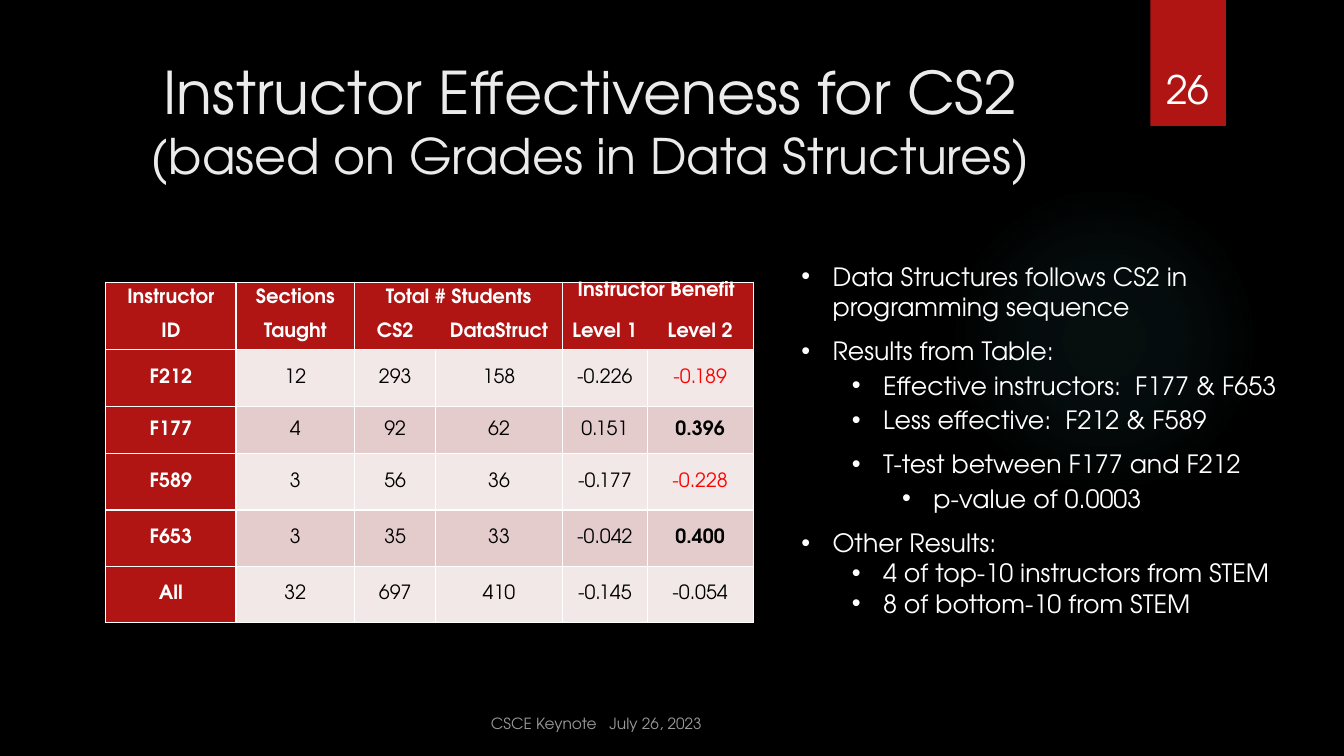
from lxml import etree
from pptx import Presentation
from pptx import util as u
from pptx.dml.color import RGBColor
from pptx.enum import shapes, text
from pptx.oxml import parse_xml
from pptx.oxml.ns import nsdecls, qn

FONT = "TeX Gyre Adventor"
RED, WHITE, BLACK = "B01513", "FFFFFF", "000000"
BANDS = ("F2E8E7", "E4CCCC")
CENTER = text.PP_ALIGN.CENTER

COLUMNS = [1.29, 1.18, 0.8, 1.26, 0.84, 1.05]
ROWS = [0.32, 0.35, 0.56, 0.47, 0.56, 0.56, 0.56]
VALUES = [
    ["Instructor", "Sections", "Total # Students", None, "Instructor Benefit", None],
    ["ID", "Taught", "CS2", "DataStruct", "Level 1", "Level 2"],
    ["F212", "12", "293", "158", "-0.226", "-0.189"],
    ["F177", "4", "92", "62", "0.151", "0.396"],
    ["F589", "3", "56", "36", "-0.177", "-0.228"],
    ["F653", "3", "35", "33", "-0.042", "0.400"],
    ["All", "32", "697", "410", "-0.145", "-0.054"],
]
HEADER_EDGES = [  # white edges of the second header row
    "LRB", "LRB", "LB", "RB", "LB", "RB"]
EMPHASIS = {"-0.189": {"color": "FF0000"}, "-0.228": {"color": "FF0000"},
            "0.396": {"bold": True}, "0.400": {"bold": True}}
FINDINGS = [  # level, space after, text
    (0, 10, "Data Structures follows CS2 in programming sequence"),
    (0, 3, "Results from Table:"),
    (1, 3, "Effective instructors:  F177 & F653"),
    (1, 10, "Less effective:  F212 & F589"),
    (1, 3, "T-test between F177 and F212"),
    (2, 10, "p-value of 0.0003"),
    (0, 0, "Other Results:"),
    (1, 0, "4 of top-10 instructors from STEM"),
    (1, 0, "8 of bottom-10 from STEM"),
]


def rgb(value):
    return RGBColor.from_string(value)


def add_span(para, words, size=18, color=WHITE, bold=False):
    span = para.add_run()
    span.text = words
    span.font.name, span.font.size, span.font.bold = FONT, u.Pt(size), bold
    span.font.color.rgb = rgb(color)


def add_box(page, box, anchor=text.MSO_ANCHOR.TOP, align=None):
    frame = page.shapes.add_textbox(*map(u.Inches, box)).text_frame
    frame.word_wrap = True
    frame.vertical_anchor = anchor
    frame.paragraphs[0].alignment = align
    return frame


def add_shape(page, kind, box):
    shape = page.shapes.add_shape(kind, *map(u.Inches, box))
    shape.shadow.inherit = False
    shape.line.fill.background()
    return shape


def add_glow(page, box):
    glow = add_shape(page, shapes.MSO_SHAPE.OVAL, box)
    stops = "".join(
        f'<a:gs pos="{place}000"><a:srgbClr val="50B9C1"><a:alpha val="{alpha}000"/>'
        "</a:srgbClr></a:gs>" for place, alpha in ((0, 7), (36, 6), (69, 0), (100, 0)))
    glow._element.spPr.find(qn("a:prstGeom")).addnext(parse_xml(
        f'<a:gradFill {nsdecls("a")} rotWithShape="1"><a:gsLst>{stops}</a:gsLst>'
        '<a:path path="circle"><a:fillToRect l="50000" t="50000" r="50000" b="50000"/>'
        "</a:path></a:gradFill>"))


def add_page_number(page, box, number):
    left, top, width, height = box
    ribbon = add_shape(page, shapes.MSO_SHAPE.RECTANGLE, box)
    ribbon.fill.solid()
    ribbon.fill.fore_color.rgb = rgb(RED)
    label = (left - 0.09, top + 0.32, width + 0.17, height - 0.41)
    frame = add_box(page, label, text.MSO_ANCHOR.BOTTOM, CENTER)
    add_span(frame.paragraphs[0], number, size=28)


def add_title(page, box):
    para = add_box(page, box, align=CENTER).paragraphs[0]
    add_span(para, "Instructor Effectiveness for CS2", size=42, color="EBEBEB")
    para.add_line_break()
    add_span(para, "(based on Grades in Data Structures)", size=35, color="EBEBEB")


def set_edges(cell, white):
    properties = cell._tc.get_or_add_tcPr()
    for index, edge in enumerate("LRTB"):
        line = etree.Element(qn(f"a:ln{edge}"), w=str(u.Pt(1)))
        if edge in white:
            fill = etree.SubElement(line, qn("a:solidFill"))
            etree.SubElement(fill, qn("a:srgbClr"), val=WHITE)
        else:
            etree.SubElement(line, qn("a:noFill"))
        properties.insert(index, line)


def fill_cell(cell, row, column, value):
    heading = row < 2 or column == 0
    cell.fill.solid()
    cell.fill.fore_color.rgb = rgb(RED if heading else BANDS[row % 2])
    set_edges(cell, "LTR" if row == 0 else HEADER_EDGES[column] if row == 1 else "LRTB")
    cell.margin_left = cell.margin_right = u.Inches(0.04)
    cell.margin_top = cell.margin_bottom = 0
    cell.vertical_anchor = text.MSO_ANCHOR.MIDDLE
    if value is None:
        return
    para = cell.text_frame.paragraphs[0]
    para.alignment = CENTER
    style = {"color": WHITE if heading else BLACK, "bold": heading}
    add_span(para, value, size=14, **{**style, **EMPHASIS.get(value, {})})


def add_scores(page, box):
    table = page.shapes.add_table(len(ROWS), len(COLUMNS), *map(u.Inches, box)).table
    for column, width in zip(table.columns, COLUMNS):
        column.width = u.Inches(width)
    for row, height in zip(table.rows, ROWS):
        row.height = u.Inches(height)
    for row, values in enumerate(VALUES):
        for column, value in enumerate(values):
            fill_cell(table.cell(row, column), row, column, value)
    for column in (2, 4):
        table.cell(0, column).merge(table.cell(0, column + 1))
    # The benefit heading sits at the top left of its cell
    benefit = table.cell(0, 4)
    benefit.margin_left = u.Inches(0.15)
    benefit.vertical_anchor = text.MSO_ANCHOR.TOP
    benefit.text_frame.paragraphs[0].alignment = text.PP_ALIGN.JUSTIFY


def add_findings(page, box):
    frame = add_box(page, box)
    for index, (level, after, words) in enumerate(FINDINGS):
        para = frame.add_paragraph() if index else frame.paragraphs[0]
        para.level = level
        para.space_after = u.Pt(after)
        properties = para._p.get_or_add_pPr()
        properties.set("marL", str(u.Inches(0.31 + 0.5 * level)))
        properties.set("indent", str(u.Inches(-0.31)))
        etree.SubElement(properties, qn("a:buFont"), typeface="Arial")
        etree.SubElement(properties, qn("a:buChar"), char="•")
        add_span(para, words)


def add_footer(page, box):
    frame = add_box(page, box, text.MSO_ANCHOR.BOTTOM)
    add_span(frame.paragraphs[0], "CSCE Keynote   July 26, 2023", size=11, color="999999")


def main():
    deck = Presentation()
    deck.slide_width, deck.slide_height = u.Inches(13.33), u.Inches(7.5)
    page = deck.slides.add_slide(deck.slide_layouts[6])
    page.background.fill.solid()
    page.background.fill.fore_color.rgb = rgb(BLACK)
    # Backdrop and heading
    add_glow(page, (9.41, 1.83, 3.08, 3.08))
    add_page_number(page, (11.41, 0, 0.75, 1.25), "26")
    add_title(page, (0.71, 0.5, 10.29, 1.53))
    # Body
    add_scores(page, (1.05, 2.8, sum(COLUMNS), sum(ROWS)))
    add_findings(page, (7.85, 2.54, 4.96, 3.98))
    add_footer(page, (4.77, 6.99, 4.22, 0.33))
    deck.save("out.pptx")


if __name__ == "__main__":
    main()
